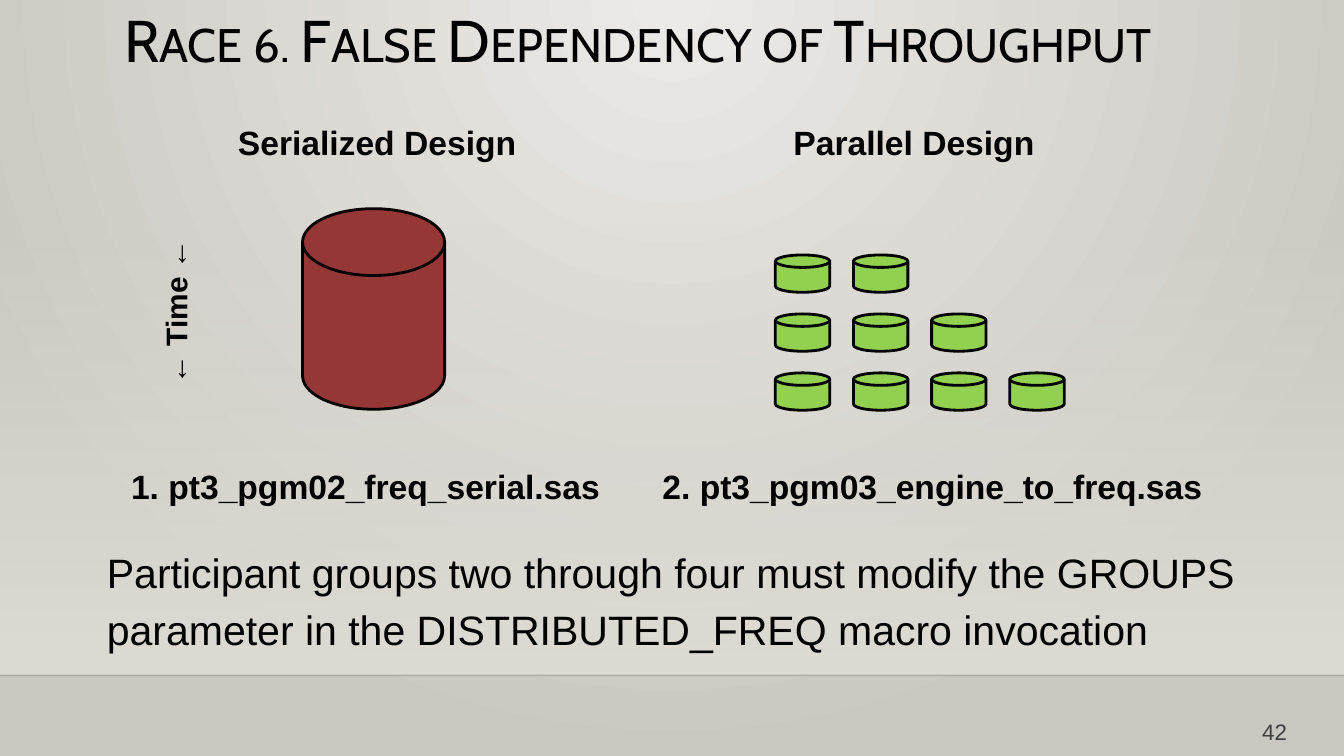
from lxml.etree import SubElement
from pptx import Presentation
from pptx.dml.color import RGBColor
from pptx.enum.shapes import MSO_CONNECTOR, MSO_SHAPE
from pptx.enum.text import MSO_ANCHOR, PP_ALIGN
from pptx.oxml.ns import qn
from pptx.util import Inches, Pt

TITLE = "Race 6. False Dependency of Throughput"
LABELS = [
    ("Serialized Design", 2.23, 1.08, 3.19),
    ("Parallel Design", 7.74, 1.08, 2.7),
    ("1. pt3_pgm02_freq_serial.sas", 1.17, 4.49, 5.08),
    ("2. pt3_pgm03_engine_to_freq.sas", 6.44, 4.49, 5.78),
]
TIME_LABEL = "← Time ←"
INSTRUCTION = (
    "Participant groups two through four must modify the GROUPS "
    "parameter in the DISTRIBUTED_FREQ macro invocation"
)
SLIDE_NUMBER = "42"
DISKS_PER_ROW = [2, 3, 4]

BLACK = RGBColor(0, 0, 0)
GRAY = RGBColor(0x40, 0x40, 0x40)
RED = RGBColor(0x95, 0x37, 0x35)
GREEN = RGBColor(0x92, 0xD0, 0x50)
CENTER_GRAY = RGBColor(0xEC, 0xEA, 0xE7)
EDGE_GRAY = RGBColor(0xCA, 0xC7, 0xC1)
OVERLAY_GRAY = RGBColor(0xDF, 0xDB, 0xD5)


def set_gradient(fill, colors):
    fill.gradient()
    for stop, color, position in zip(fill.gradient_stops, colors, (0, 1)):
        stop.color.rgb = color
        stop.position = position


def set_alpha(color_element, percent):
    SubElement(color_element, qn("a:alpha")).set("val", str(percent * 1000))


def format_text(frame, text, size=24, font="Arial", color=BLACK, bold=False,
                align=PP_ALIGN.LEFT, spacing=1.15, after=12,
                margins=(0.13, 0.07), anchor=MSO_ANCHOR.TOP, wrap=True):
    frame.word_wrap = wrap
    frame.vertical_anchor = anchor
    frame.margin_left = frame.margin_right = Inches(margins[0])
    frame.margin_top = frame.margin_bottom = Inches(margins[1])
    paragraph = frame.paragraphs[0]
    paragraph.alignment = align
    paragraph.line_spacing = spacing
    paragraph.space_before = Pt(0)
    paragraph.space_after = Pt(after)
    run = paragraph.add_run()
    run.text = text
    run.font.size = Pt(size)
    run.font.name = font
    run.font.bold = bold
    run.font.color.rgb = color
    return run


def add_text(slide, text, left, top, width, height, **style):
    box = slide.shapes.add_textbox(
        Inches(left), Inches(top), Inches(width), Inches(height))
    format_text(box.text_frame, text, **style)
    return box


def add_disk(slide, left, top, width, height, color):
    disk = slide.shapes.add_shape(
        MSO_SHAPE.FLOWCHART_MAGNETIC_DISK,
        Inches(left), Inches(top), Inches(width), Inches(height))
    disk.shadow.inherit = False
    disk.fill.solid()
    disk.fill.fore_color.rgb = color
    disk.line.color.rgb = BLACK
    disk.line.width = Pt(2)


def add_background(slide):
    set_gradient(slide.background.fill, (CENTER_GRAY, EDGE_GRAY))
    gradient = next(slide.element.iter(qn("a:gradFill")))
    gradient.remove(gradient.find(qn("a:lin")))
    circle = SubElement(gradient, qn("a:path"))
    circle.set("path", "circle")
    target = SubElement(circle, qn("a:fillToRect"))
    for side, value in (("l", "43000"), ("r", "43000"), ("b", "100000")):
        target.set(side, value)

    overlay = slide.shapes.add_shape(
        MSO_SHAPE.RECTANGLE, 0, Inches(2.21), Inches(13.33), Inches(4.49))
    overlay.shadow.inherit = False
    overlay.line.fill.background()
    set_gradient(overlay.fill, (OVERLAY_GRAY, OVERLAY_GRAY))
    overlay.fill.gradient_angle = 270
    set_alpha(next(overlay.element.iter(qn("a:srgbClr"))), 0)

    rule = slide.shapes.add_connector(
        MSO_CONNECTOR.STRAIGHT, 0, Inches(6.7), Inches(13.33), Inches(6.7))
    rule.line.color.rgb = BLACK
    rule.line.width = Pt(1)
    set_alpha(next(rule.element.iter(qn("a:srgbClr"))), 20)
    SubElement(rule.element.spPr, qn("a:effectLst"))


def main():
    presentation = Presentation()
    presentation.slide_width = Inches(13.33)
    presentation.slide_height = Inches(7.5)
    slide = presentation.slides.add_slide(presentation.slide_layouts[5])
    add_background(slide)

    title = slide.shapes.title
    title.left, title.top = Inches(1.13), Inches(0)
    title.width, title.height = Inches(11.09), Inches(0.86)
    run = format_text(title.text_frame, TITLE, size=42, font="Cabin",
                      spacing=0.9, after=0, margins=(0.1, 0.05),
                      anchor=MSO_ANCHOR.MIDDLE)
    run.font._element.set("cap", "small")

    for text, left, top, width in LABELS:
        add_text(slide, text, left, top, width, 0.54, bold=True,
                 align=PP_ALIGN.JUSTIFY)
    time_box = add_text(slide, TIME_LABEL, 0.86, 2.82, 1.7, 0.54,
                        size=21.3, bold=True)
    time_box.rotation = 270
    add_text(slide, INSTRUCTION, 0.93, 5.29, 11.85, 1.57, size=29.3)
    add_text(slide, SLIDE_NUMBER, 12.42, 7.08, 0.48, 0.37, size=16,
             color=GRAY, spacing=1, after=0, margins=(0.1, 0.05), wrap=False)

    add_disk(slide, 3, 2.07, 1.41, 1.99, RED)
    for row, count in enumerate(DISKS_PER_ROW):
        for column in range(count):
            add_disk(slide, 7.69 + 0.775 * column, 2.53 + 0.585 * row,
                     0.54, 0.37, GREEN)

    presentation.save("out.pptx")


if __name__ == "__main__":
    main()
